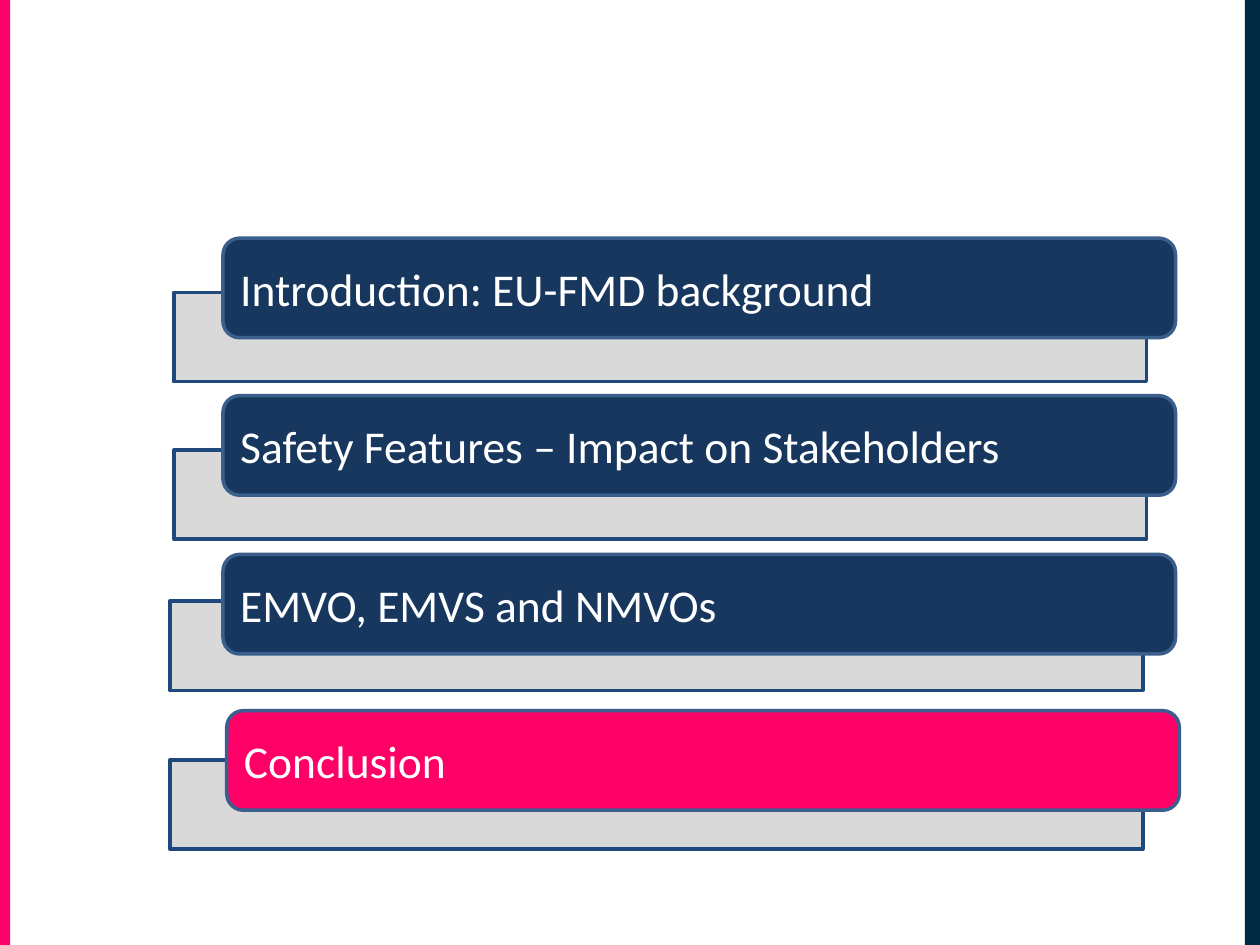
from pptx import Presentation
from pptx.dml.color import RGBColor
from pptx.enum import shapes, text
from pptx.util import Inches, Pt

NAVY, PINK, GREY, WHITE = "17375E", "FF0066", "D9D9D9", "FFFFFF"
EDGES = [(0, -0.01, 0.08, PINK), (9.88, 0, 0.12, "002B43")]
AGENDA = [
    ("Introduction: EU-FMD background", NAVY, (1.77, 1.89), (1.38, 2.32)),
    ("Safety Features – Impact on Stakeholders", NAVY, (1.77, 3.14), (1.38, 3.57)),
    ("EMVO, EMVS and NMVOs", NAVY, (1.77, 4.4), (1.35, 4.77)),
    ("Conclusion", PINK, (1.8, 5.64), (1.35, 6.03)),
]
BAR_SIZE = (7.56, 0.79)
BACK_SIZE = (7.72, 0.71)


def rgb(value):
    return RGBColor.from_string(value)


def add_box(s, kind, pos, size, fill, line=None):
    sp = s.shapes.add_shape(kind, *[Inches(v) for v in (*pos, *size)])
    sp.shadow.inherit = False
    sp.fill.solid()
    sp.fill.fore_color.rgb = rgb(fill)
    if line:
        sp.line.color.rgb = rgb(line)
        sp.line.width = Pt(2)
    else:
        sp.line.fill.background()
    return sp


def add_label(sp, label):
    tf = sp.text_frame
    tf.word_wrap = True
    tf.vertical_anchor = text.MSO_ANCHOR.MIDDLE
    p = tf.paragraphs[0]
    p.alignment = text.PP_ALIGN.LEFT
    r = p.add_run()
    r.text = label
    r.font.name = "Calibri"
    r.font.size = Pt(26)
    r.font.color.rgb = rgb(WHITE)


def main():
    prs = Presentation()
    prs.slide_width, prs.slide_height = Inches(10), Inches(7.5)
    s = prs.slides.add_slide(prs.slide_layouts[6])
    rect = shapes.MSO_SHAPE.RECTANGLE
    rounded = shapes.MSO_SHAPE.ROUNDED_RECTANGLE

    for left, top, width, color in EDGES:
        add_box(s, rect, (left, top), (width, 7.52), color)
    for label, color, bar_pos, back_pos in AGENDA:
        add_box(s, rect, back_pos, BACK_SIZE, GREY, "1F497D")
        bar = add_box(s, rounded, bar_pos, BAR_SIZE, color, "3A5F8C")
        add_label(bar, label)
    prs.save("out.pptx")


if __name__ == "__main__":
    main()
